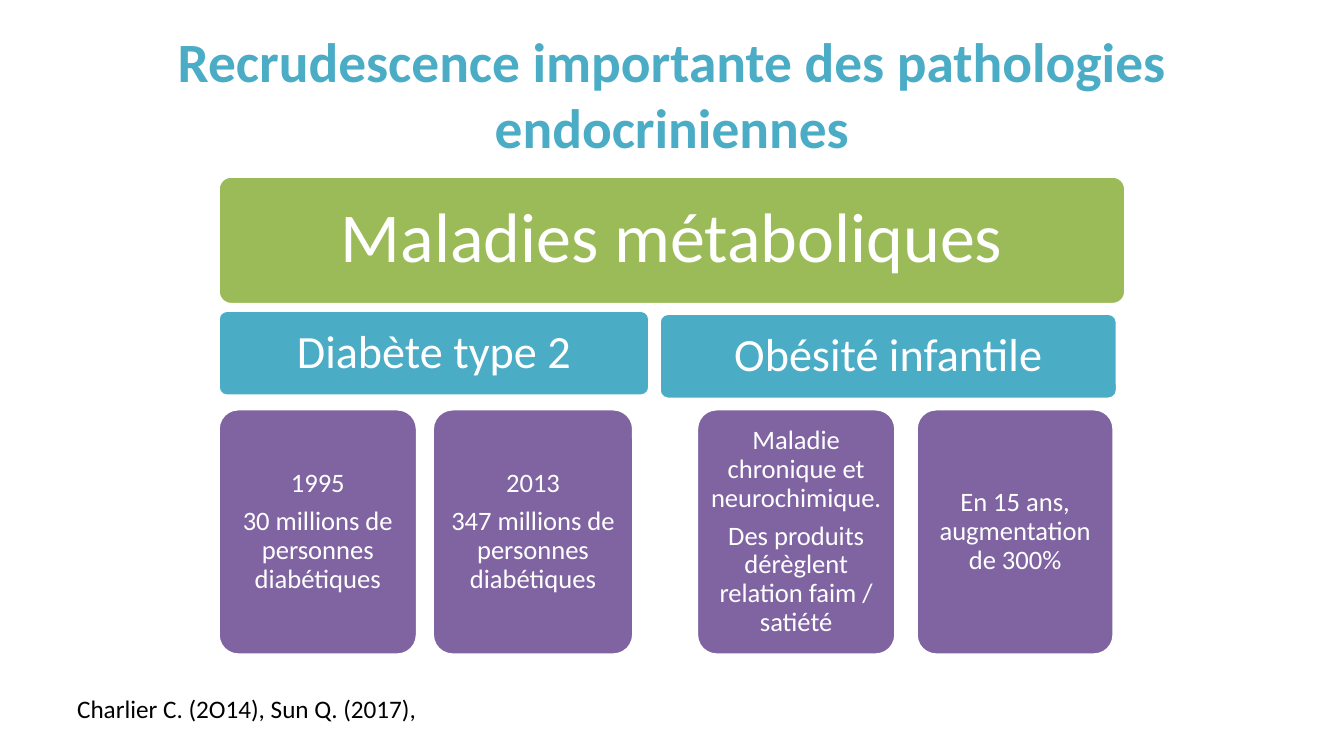
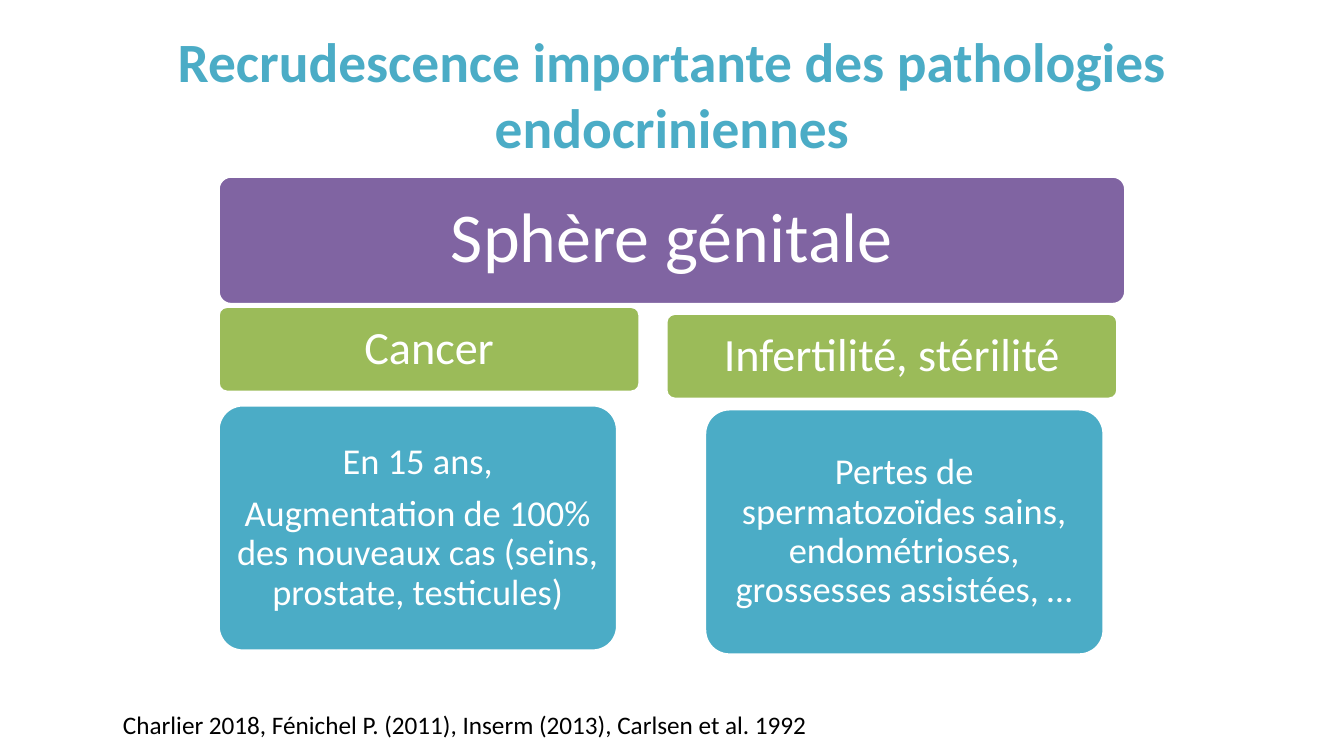
import pptx
import pptx.util
import pptx.dml.color
import pptx.enum.shapes
import pptx.enum.text

Pt = pptx.util.Pt
RGB = pptx.dml.color.RGBColor
Align = pptx.enum.text.PP_ALIGN
Anchor = pptx.enum.text.MSO_ANCHOR
Fit = pptx.enum.text.MSO_AUTO_SIZE
ROUND = pptx.enum.shapes.MSO_SHAPE.ROUNDED_RECTANGLE

TEAL = RGB(0x4B, 0xAC, 0xC6)
GREEN = RGB(0x9B, 0xBB, 0x59)
PURPLE = RGB(0x80, 0x64, 0xA2)
WHITE = RGB(0xFF, 0xFF, 0xFF)
BLACK = RGB(0, 0, 0)

FONT = "Calibri"
TITLE = "Recrudescence importante des pathologies endocriniennes"
LEFT = 156


def write(frame, lines, size, color, bold=False, align=Align.CENTER, space=None, after=0):
    for i, line in enumerate(lines):
        para = frame.paragraphs[0] if i == 0 else frame.add_paragraph()
        para.alignment = align
        para.line_spacing = space
        para.space_after = Pt(after)
        run = para.add_run()
        run.text = line
        run.font.name = FONT
        run.font.size = Pt(size)
        run.font.bold = bold
        run.font.color.rgb = color


class Deck:
    def __init__(self):
        self.show = pptx.Presentation()
        self.show.slide_width = Pt(960)
        self.show.slide_height = Pt(540)
        self.slide = None

    def start(self):
        self.slide = self.show.slides.add_slide(self.show.slide_layouts[5])
        head = self.slide.shapes.title
        head.left, head.top, head.width, head.height = Pt(48), Pt(21.6), Pt(864), Pt(90)
        frame = head.text_frame
        frame.auto_size = Fit.NONE
        frame.word_wrap = True
        frame.vertical_anchor = Anchor.MIDDLE
        write(frame, [TITLE], size=39.6, color=TEAL, bold=True)

    def box(self, x, y, w, h, fill, size, lines):
        box = self.slide.shapes.add_shape(ROUND, Pt(x), Pt(y), Pt(w), Pt(h))
        box.adjustments[0] = 0.1
        box.shadow.inherit = False
        box.fill.solid()
        box.fill.fore_color.rgb = fill
        box.line.color.rgb = WHITE
        box.line.width = Pt(2)
        frame = box.text_frame
        frame.word_wrap = True
        frame.vertical_anchor = Anchor.MIDDLE
        inset = Pt(0.3 * size)
        frame.margin_left = frame.margin_right = inset
        frame.margin_top = frame.margin_bottom = inset
        write(frame, lines, size=size, color=WHITE, space=0.9, after=0.35 * size)

    def banner(self, text, fill):
        self.box(LEFT, 126, 648, 91.4, fill, 50, [text])

    def branch(self, x, y, w, text, fill):
        self.box(x, y, w, 61, fill, 33, [text])

    def leaf(self, x, y, w, fill, size, *lines):
        self.box(x, y, w, 175.5, fill, size, lines)

    def source(self, x, y, w, text):
        note = self.slide.shapes.add_textbox(Pt(x), Pt(y), Pt(w), Pt(29))
        frame = note.text_frame
        frame.word_wrap = False
        frame.auto_size = Fit.SHAPE_TO_FIT_TEXT
        write(frame, [text], size=18, color=BLACK, align=Align.LEFT)


def main():
    deck = Deck()

    deck.start()
    deck.banner("Maladies métaboliques", GREEN)
    deck.branch(LEFT, 221.8, 308, "Diabète type 2", TEAL)
    deck.branch(471, 224, 327, "Obésité infantile", TEAL)
    for x, w, lines in (
        (LEFT, 142, ("1995", "30 millions de personnes diabétiques")),
        (309, 143.5, ("2013", "347 millions de personnes diabétiques")),
        (497.7, 142, ("Maladie chronique et neurochimique.",
                      "Des produits dérèglent relation faim / satiété")),
        (654.6, 141, ("En 15 ans, augmentation de 300%",)),
    ):
        deck.leaf(x, 292.2, w, PURPLE, 19, *lines)
    deck.source(48, 492, 264, "Charlier C. (2O14), Sun Q. (2017),")

    deck.start()
    deck.banner("Sphère génitale", PURPLE)
    deck.branch(LEFT, 219, 301, "Cancer", GREEN)
    deck.branch(475.8, 224, 322.5, "Infertilité, stérilité", GREEN)
    deck.leaf(LEFT, 289.4, 285, TEAL, 26, "En 15 ans,",
              "Augmentation de 100% des nouveaux cas (seins, prostate, testicules)")
    deck.leaf(503.5, 292.2, 285, TEAL, 26,
              "Pertes de spermatozoïdes sains, endométrioses, grossesses assistées, …")
    deck.source(80.8, 503.3, 509,
                "Charlier 2018, Fénichel P. (2011), Inserm (2013), Carlsen et al. 1992")

    deck.show.save("out.pptx")


if __name__ == "__main__":
    main()
